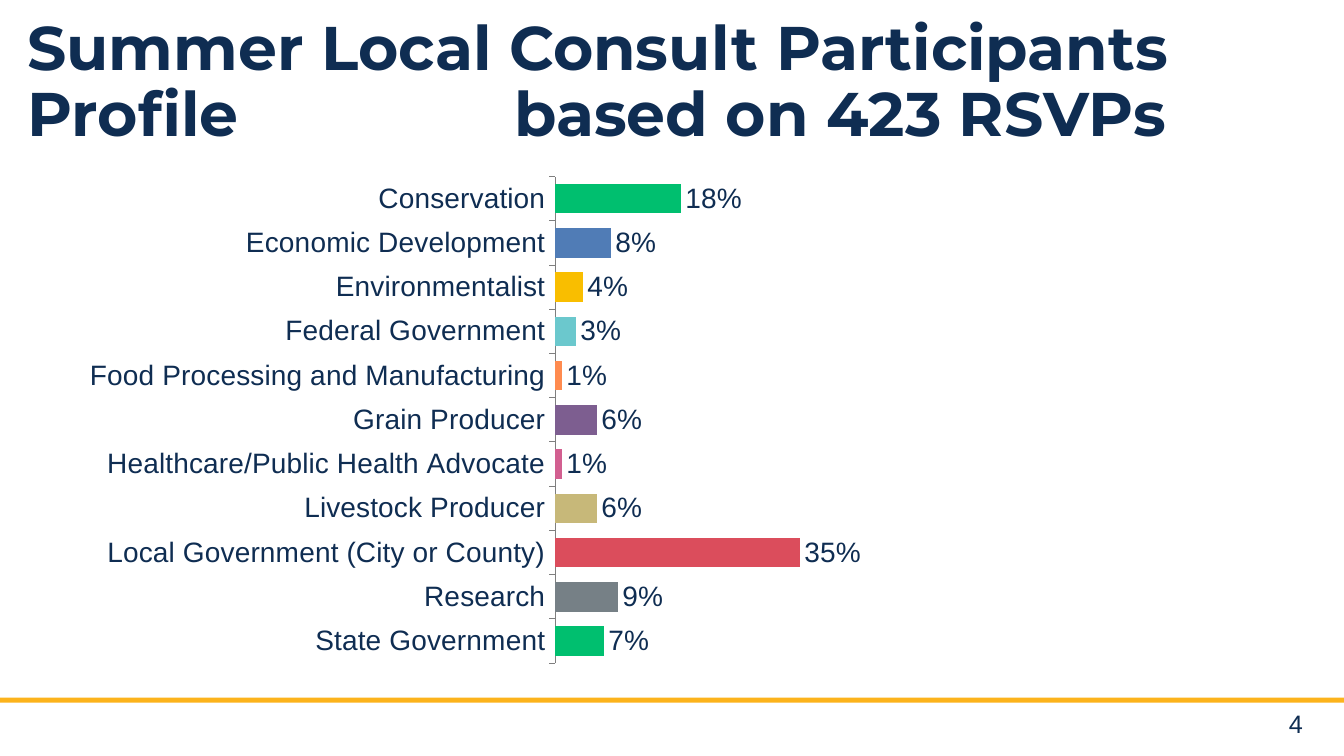
"""Build the slide profiling the summer local consult participants."""
import pptx
import pptx.chart.data
import pptx.dml.color
import pptx.enum.chart
import pptx.enum.shapes
import pptx.enum.text
import pptx.oxml
import pptx.oxml.ns
import pptx.util
from lxml import etree

Inches, Pt = pptx.util.Inches, pptx.util.Pt
ALIGN, ANCHOR = pptx.enum.text.PP_ALIGN, pptx.enum.text.MSO_ANCHOR

TITLE = "Summer Local Consult Participants Profile\tbased on 423 RSVPs"
PAGE = "4"
COLORS = {
    "navy": "0F2D52", "gold": "FCB31C", "axis": "7F7F7F", "green": "00BF6F",
    "blue": "507CB6", "yellow": "F9BE00", "aqua": "6BC8CD", "orange": "FF8B4F",
    "purple": "7D5E90", "pink": "D25F90", "sand": "C7B879", "red": "DB4D5C",
    "gray": "768086",
}
PARTICIPANTS = [
    ("Conservation", 0.18, "green"),
    ("Economic Development", 0.08, "blue"),
    ("Environmentalist", 0.04, "yellow"),
    ("Federal Government", 0.03, "aqua"),
    ("Food Processing and Manufacturing", 0.01, "orange"),
    ("Grain Producer", 0.06, "purple"),
    ("Healthcare/Public Health Advocate", 0.01, "pink"),
    ("Livestock Producer", 0.06, "sand"),
    ("Local Government (City or County)", 0.35, "red"),
    ("Research", 0.09, "gray"),
    ("State Government", 0.07, "green"),
]
PLOT = {"x": 0.41, "y": 0.04, "w": 0.55, "h": 0.87}


def rgb(name):
    """Return the named colour."""
    return pptx.dml.color.RGBColor.from_string(COLORS[name])


def style(font, size, name="Arial", bold=False):
    """Format a font in the slide's navy."""
    font.size, font.name, font.bold = Pt(size), name, bold
    font.color.rgb = rgb("navy")


def write(sp, text, size, font="Arial", bold=False, align=ALIGN.LEFT,
          anchor=ANCHOR.TOP, spacing=None, tab=None):
    """Put one formatted paragraph in a shape."""
    tf = sp.text_frame
    tf.word_wrap = True
    tf.auto_size = pptx.enum.text.MSO_AUTO_SIZE.NONE
    tf.vertical_anchor = anchor
    p = tf.paragraphs[0]
    p.alignment = align
    if spacing:
        p.line_spacing = spacing
    if tab:
        qn = pptx.oxml.ns.qn
        stops = etree.SubElement(p._p.get_or_add_pPr(), qn("a:tabLst"))
        etree.SubElement(stops, qn("a:tab"), pos=str(Inches(tab)), algn="l")
    r = p.add_run()
    r.text = text
    style(r.font, size, font, bold)


def add_profile_chart(slide):
    """Add the bar chart of participant shares."""
    data = pptx.chart.data.CategoryChartData(number_format="0%")
    data.categories = [name for name, _, _ in PARTICIPANTS]
    data.add_series("Series 1", [share for _, share, _ in PARTICIPANTS])
    chart = slide.shapes.add_chart(
        pptx.enum.chart.XL_CHART_TYPE.BAR_CLUSTERED, Inches(0.33), Inches(1.53),
        Inches(12.63), Inches(5.55), data).chart
    chart.has_title = chart.has_legend = False
    style(chart.font, 18)

    axis = chart.category_axis
    axis.reverse_order = True
    axis.has_major_gridlines = False
    axis.major_tick_mark = pptx.enum.chart.XL_TICK_MARK.OUTSIDE
    axis.tick_label_position = pptx.enum.chart.XL_TICK_LABEL_POSITION.LOW
    axis.format.line.color.rgb = rgb("axis")
    axis.format.line.width = Pt(0.75)
    style(axis.tick_labels.font, 20)

    values = chart.value_axis
    values.minimum_scale, values.maximum_scale = 0, 1
    values.has_major_gridlines = False
    values.visible = False

    plot = chart.plots[0]
    plot.gap_width, plot.overlap = 50, 100
    plot.vary_by_categories = False
    plot.has_data_labels = True
    labels = plot.data_labels
    labels.show_value = True
    labels.number_format, labels.number_format_is_linked = "0%", False
    labels.position = pptx.enum.chart.XL_LABEL_POSITION.OUTSIDE_END
    style(labels.font, 20)

    series = plot.series[0]
    series.format.fill.solid()
    series.format.fill.fore_color.rgb = rgb("green")
    for i, (_, _, color) in enumerate(PARTICIPANTS):
        fill = series.points[i].format.fill
        fill.solid()
        fill.fore_color.rgb = rgb(color)
    place_plot(chart)


def place_plot(chart):
    """Fix the inner plot area by fractions of the chart."""
    qn = pptx.oxml.ns.qn
    area = chart._chartSpace.chart.plotArea
    for old in area.findall(qn("c:layout")):
        area.remove(old)
    layout = etree.Element(qn("c:layout"))
    manual = etree.SubElement(layout, qn("c:manualLayout"))
    settings = [("layoutTarget", "inner"), ("xMode", "edge"), ("yMode", "edge")]
    for tag, val in settings + list(PLOT.items()):
        etree.SubElement(manual, qn("c:" + tag), val=str(val))
    area.insert(0, layout)


def main():
    """Build and save the slide."""
    prs = pptx.Presentation()
    prs.slide_width, prs.slide_height = Inches(13.33), Inches(7.5)
    slide = prs.slides.add_slide(prs.slide_layouts[5])

    rule = slide.shapes.add_shape(
        pptx.enum.shapes.MSO_SHAPE.RECTANGLE, 0, Inches(6.92),
        prs.slide_width, Inches(0.05))
    rule.shadow.inherit = False
    rule.fill.solid()
    rule.fill.fore_color.rgb = rgb("gold")
    rule.line.fill.background()

    page = slide.shapes.add_textbox(
        Inches(12.08), Inches(7), Inches(0.94), Inches(0.35))
    write(page, PAGE, 18, align=ALIGN.RIGHT, anchor=ANCHOR.MIDDLE)

    title = slide.shapes.title
    title.left, title.top = Inches(0.17), Inches(0.12)
    title.width, title.height = Inches(12.72), Inches(0.8)
    write(title, TITLE, 44, font="Montserrat", bold=True, spacing=0.9, tab=4.83)

    add_profile_chart(slide)
    prs.save("out.pptx")


if __name__ == "__main__":
    main()
